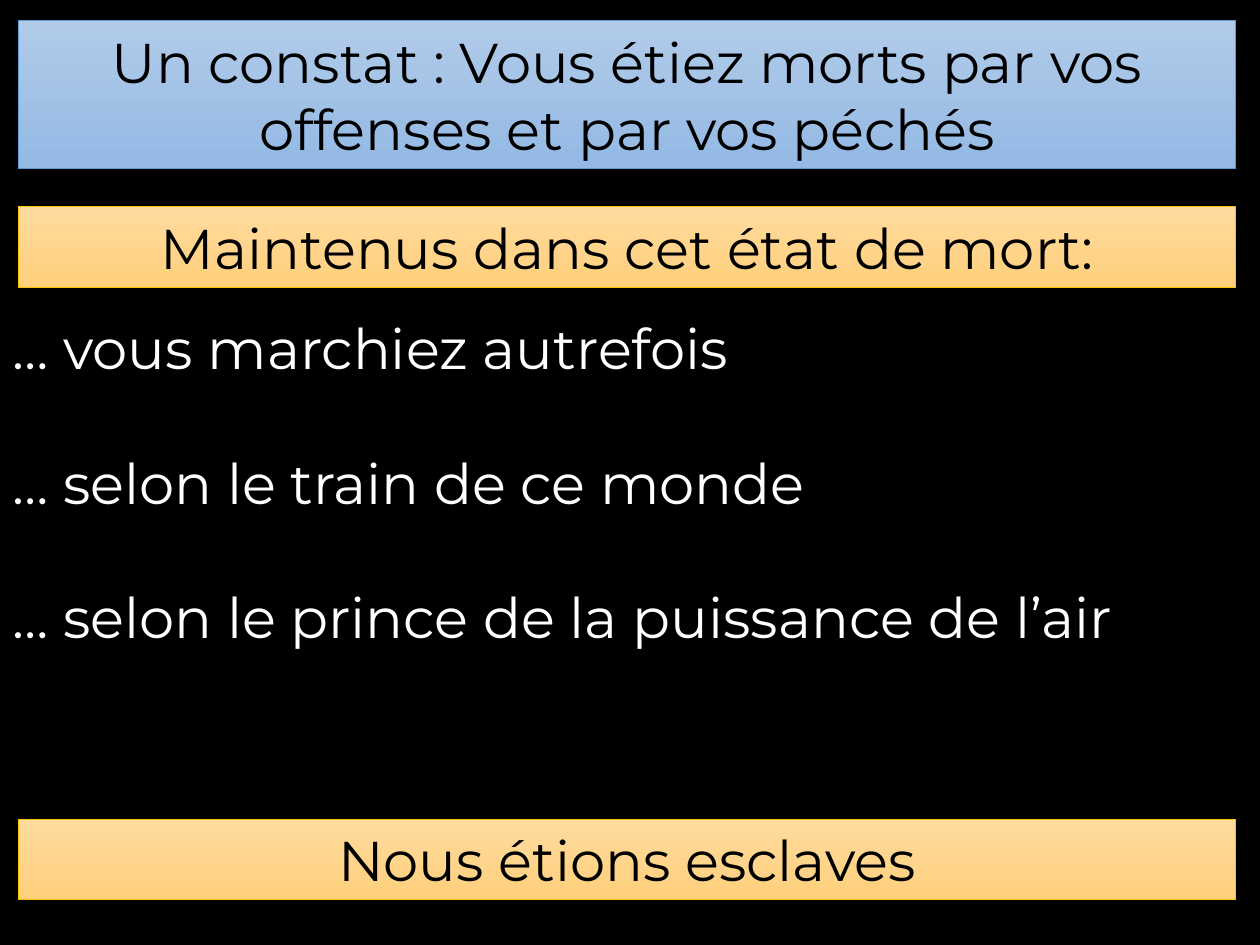
"""Build a slide of three title bands and a list of statements."""
from pptx import Presentation
from pptx.dml.color import RGBColor
from pptx.enum import shapes, text
from pptx.util import Inches, Pt

INK = {
    "back": "000000", "dark": "000000", "light": "FFFFFF",
    "blue": ("B1CBE9", "93B9E4", "5B9BD5"),
    "gold": ("FFDB9E", "FFD07C", "FFC000"),
}
BANDS = [
    (0.16, 1.18, "blue", "Un constat : Vous étiez morts par vos offenses et par vos péchés"),
    (1.64, 0.64, "gold", "Maintenus dans cet état de mort:"),
    (6.5, 0.64, "gold", "Nous étions esclaves"),
]
LINES = [
    "… vous marchiez autrefois",
    "… selon le train de ce monde",
    "… selon le prince de la puissance de l’air",
]


def style(para, words, ink, align):
    para.text = words
    para.alignment = align
    para.font.name = "Montserrat"
    para.font.size = Pt(32)
    para.font.color.rgb = RGBColor.from_string(INK[ink])


deck = Presentation()
deck.slide_width, deck.slide_height = Inches(10), Inches(7.5)
slide = deck.slides.add_slide(deck.slide_layouts[6])
slide.background.fill.solid()
slide.background.fill.fore_color.rgb = RGBColor.from_string(INK["back"])

for top, height, hue, words in BANDS:
    band = slide.shapes.add_shape(
        shapes.MSO_SHAPE.RECTANGLE, Inches(0.15), Inches(top), Inches(9.66), Inches(height))
    band.shadow.inherit = False
    band.fill.gradient()
    band.fill.gradient_angle = 270
    first, last, edge = INK[hue]
    for stop, shade, place in zip(band.fill.gradient_stops, (first, last), (0, 1)):
        stop.color.rgb = RGBColor.from_string(shade)
        stop.position = place
    band.line.color.rgb = RGBColor.from_string(edge)
    band.line.width = Pt(0.5)
    style(band.text_frame.paragraphs[0], words, "dark", text.PP_ALIGN.CENTER)

box = slide.shapes.add_textbox(0, Inches(2.44), Inches(10), Inches(3.33))
frame = box.text_frame
frame.word_wrap = True
for row, words in enumerate(LINES):
    para = frame.add_paragraph() if row else frame.paragraphs[0]
    style(para, words, "light", text.PP_ALIGN.JUSTIFY)
    if row:
        para.space_before = Pt(38.4)

deck.save("out.pptx")
